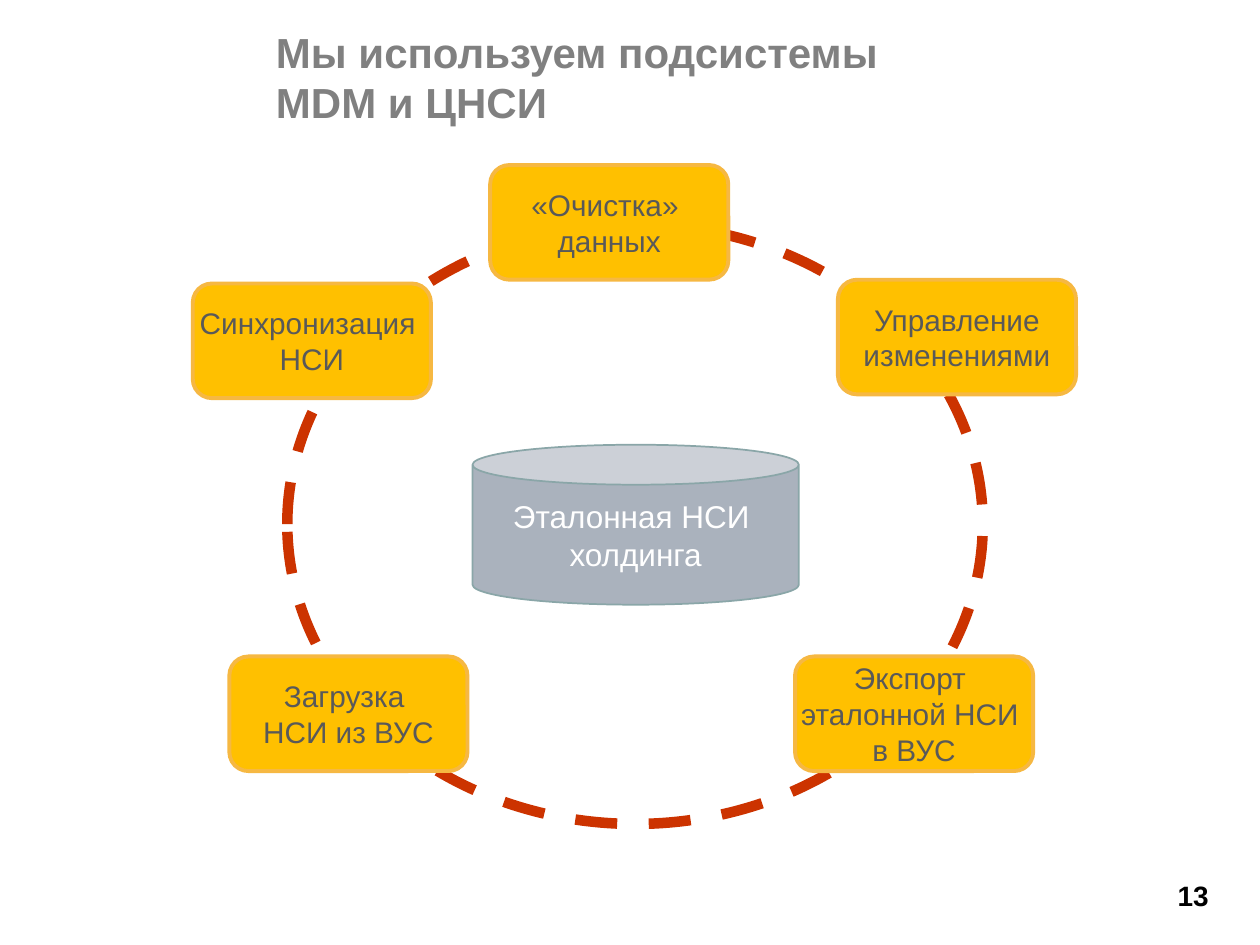
from pptx import Presentation
from pptx.dml.color import RGBColor
from pptx.enum.dml import MSO_LINE
from pptx.enum.shapes import MSO_SHAPE
from pptx.enum.text import MSO_ANCHOR, MSO_AUTO_SIZE, PP_ALIGN
from pptx.util import Inches, Pt

OVAL, ROUNDED, CAN = MSO_SHAPE.OVAL, MSO_SHAPE.ROUNDED_RECTANGLE, MSO_SHAPE.CAN
LEFT, CENTER, RIGHT = PP_ALIGN.LEFT, PP_ALIGN.CENTER, PP_ALIGN.RIGHT
TITLE_ONLY = 5

COLORS = {
    "background": "FFFFFF", "title": "808080", "number": "000000",
    "ring": "CC3300", "step": "FFC000", "step_line": "F6B842",
    "step_text": "595959", "store": "AAB2BD", "store_line": "8AA6A8",
    "store_text": "FFFFFF",
}


def write_text(shape, text, size, color, align, bold=False, wrap=True,
               anchor=MSO_ANCHOR.MIDDLE):
    frame = shape.text_frame
    frame.text = text
    frame_format = {"word_wrap": wrap, "vertical_anchor": anchor,
                    "auto_size": MSO_AUTO_SIZE.NONE}
    for name, value in frame_format.items():
        setattr(frame, name, value)
    font_format = {"name": "Arial", "size": Pt(size), "bold": bold}
    for paragraph in frame.paragraphs:
        paragraph.alignment = align
        for run in paragraph.runs:
            for name, value in font_format.items():
                setattr(run.font, name, value)
            run.font.color.rgb = RGBColor.from_string(COLORS[color])


def add_outlined(kind, left, top, width, height, fill, line, line_width):
    shape = slide.shapes.add_shape(kind, Inches(left), Inches(top),
                                   Inches(width), Inches(height))
    shape.shadow.inherit = False
    if fill:
        shape.fill.solid()
        shape.fill.fore_color.rgb = RGBColor.from_string(COLORS[fill])
    else:
        shape.fill.background()
    shape.line.color.rgb = RGBColor.from_string(COLORS[line])
    shape.line.width = Pt(line_width)
    return shape


presentation = Presentation()
presentation.slide_width = Inches(10)
presentation.slide_height = Inches(7.5)
slide = presentation.slides.add_slide(presentation.slide_layouts[TITLE_ONLY])

# Title
title = slide.shapes.title
title_place = {"left": 2.09, "top": 0.17, "width": 5.68, "height": 0.88}
for name, value in title_place.items():
    setattr(title, name, Inches(value))
title.fill.solid()
title.fill.fore_color.rgb = RGBColor.from_string(COLORS["background"])
write_text(title, "Мы используем подсистемы MDM и ЦНСИ", 24, "title", LEFT, bold=True)

# Dashed ring behind the steps
ring = add_outlined(OVAL, 2.28, 1.78, 5.52, 4.76, None, "ring", 6)
ring.line.dash_style = MSO_LINE.DASH

# Steps around the ring: \v breaks a line, \n starts a paragraph
steps = [
    (1.53, 2.25, "Синхронизация \vНСИ"),
    (1.82, 5.21, "Загрузка \vНСИ из ВУС"),
    (6.31, 5.21, "Экспорт \vэталонной НСИ \vв ВУС"),
    (3.89, 1.31, "«Очистка» \nданных"),
    (6.65, 2.22, "Управление\nизменениями"),
]
for left, top, text in steps:
    step = add_outlined(ROUNDED, left, top, 1.89, 0.91, "step", "step_line", 2.25)
    write_text(step, text, 17, "step_text", CENTER, wrap=False)

# Central data store
store = add_outlined(CAN, 3.75, 3.53, 2.59, 1.27, "store", "store_line", 1)
write_text(store, "Эталонная НСИ \nхолдинга", 18, "store_text", CENTER)

# Slide number
number = slide.shapes.add_textbox(Inches(8.94), Inches(6.9), Inches(0.75), Inches(0.39))
write_text(number, "13", 16, "number", RIGHT, bold=True, anchor=MSO_ANCHOR.TOP)
number.text_frame.paragraphs[0].line_spacing = 1.1

presentation.save("out.pptx")
